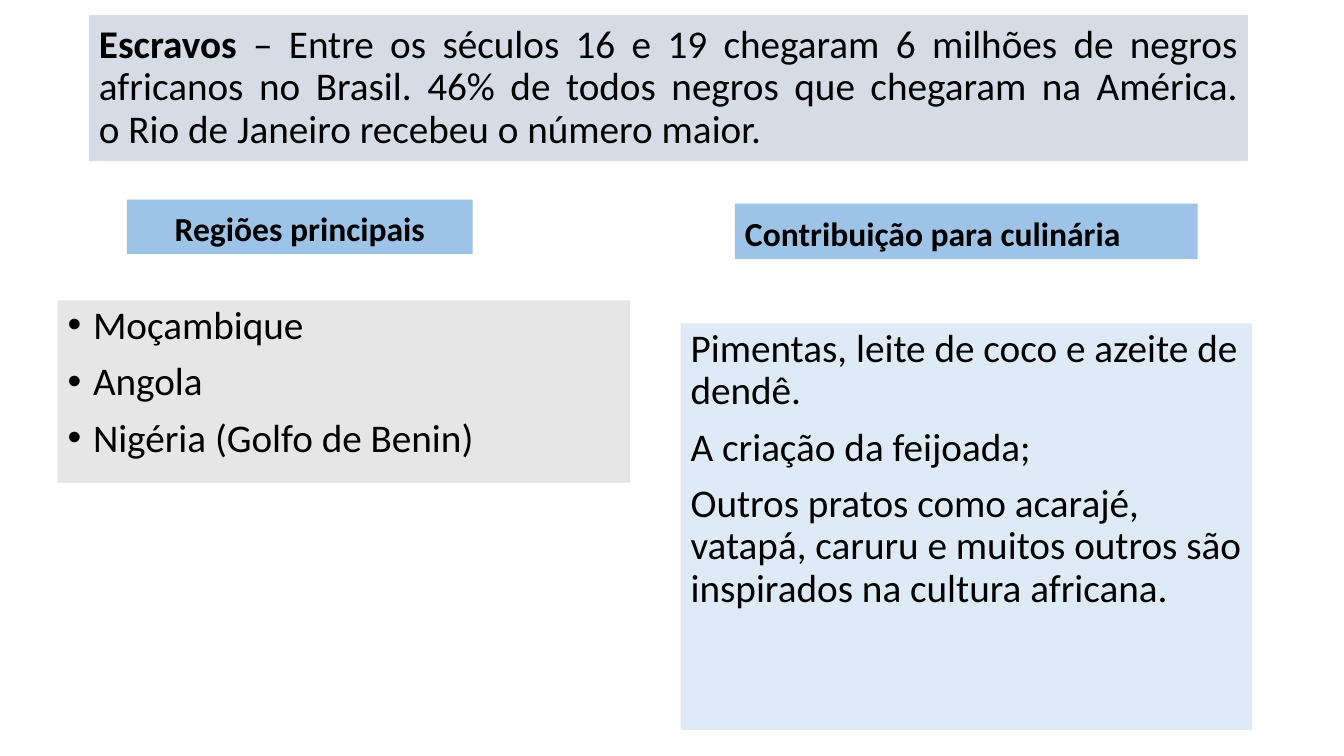
from lxml.etree import SubElement
from pptx import Presentation
from pptx.dml.color import RGBColor
from pptx.enum.text import MSO_ANCHOR, MSO_AUTO_SIZE, PP_ALIGN
from pptx.oxml.ns import qn
from pptx.util import Cm, Pt


def color(code):
    return RGBColor.from_string(code)


def place(shape, left, top, width, height, fill):
    shape.left, shape.top = Cm(left), Cm(top)
    shape.width, shape.height = Cm(width), Cm(height)
    shape.fill.solid()
    shape.fill.fore_color.rgb = color(fill)


def bullet(para, on):
    props = para._p.get_or_add_pPr()
    indent = Cm(0.64) if on else 0
    props.set("marL", str(indent))
    props.set("indent", str(-indent))
    if on:
        SubElement(props, qn("a:buFont"), typeface="Arial")
        SubElement(props, qn("a:buChar"), char="•")
    else:
        SubElement(props, qn("a:buNone"))


def add_run(para, text, size, bold):
    run = para.add_run()
    run.text = text
    font = run.font
    font.name, font.size, font.bold = "Calibri", Pt(size), bold
    font.color.rgb = color("000000")


def write(shape, lines, lead="", size=28, bold=False, align=PP_ALIGN.LEFT,
          anchor=MSO_ANCHOR.TOP, before=10, dots=False):
    frame = shape.text_frame
    frame.word_wrap = True
    frame.auto_size = MSO_AUTO_SIZE.NONE
    frame.vertical_anchor = anchor
    for index, line in enumerate(lines):
        para = frame.add_paragraph() if index else frame.paragraphs[0]
        para.alignment = align
        para.line_spacing = 0.9
        para.space_before = Pt(before)
        bullet(para, dots)
        if lead:
            add_run(para, lead, size, True)
        for row, part in enumerate(line.split("\n")):
            if row:
                para.add_line_break()
            add_run(para, part, size, bold)


def label(shape, text, align):
    write(shape, [text], size=24, bold=True, align=align,
          anchor=MSO_ANCHOR.BOTTOM)


def main():
    deck = Presentation()
    deck.slide_width, deck.slide_height = Cm(33.87), Cm(19.05)
    slide = deck.slides.add_slide(deck.slide_layouts.get_by_name("Comparison"))
    title, origin, places, cuisine, dishes = list(slide.placeholders)[:5]

    place(title, 2.24, 0.38, 29.21, 3.68, "D6DCE5")
    write(title, [" – Entre os séculos 16 e 19 chegaram 6 milhões de negros "
                  "africanos no Brasil. 46% de todos negros que chegaram na "
                  "América.\no Rio de Janeiro recebeu o número maior."],
          lead="Escravos", align=PP_ALIGN.JUSTIFY,
          anchor=MSO_ANCHOR.MIDDLE, before=0)

    place(origin, 3.2, 5.03, 8.71, 1.37, "9DC3E6")
    label(origin, "Regiões principais", PP_ALIGN.CENTER)

    place(places, 1.45, 7.57, 14.43, 4.6, "E7E6E6")
    write(places, ["Moçambique", "Angola", "Nigéria (Golfo de Benin)"],
          dots=True)

    place(cuisine, 18.52, 5.13, 11.66, 1.4, "9DC3E6")
    label(cuisine, "Contribuição para culinária", PP_ALIGN.LEFT)

    place(dishes, 17.15, 8.15, 14.4, 10.24, "DEEBF7")
    write(dishes, ["Pimentas, leite de coco e azeite de dendê.",
                   "A criação da feijoada;",
                   "Outros pratos como acarajé, vatapá, caruru e muitos "
                   "outros são inspirados na cultura africana."])

    deck.save("out.pptx")


if __name__ == "__main__":
    main()
